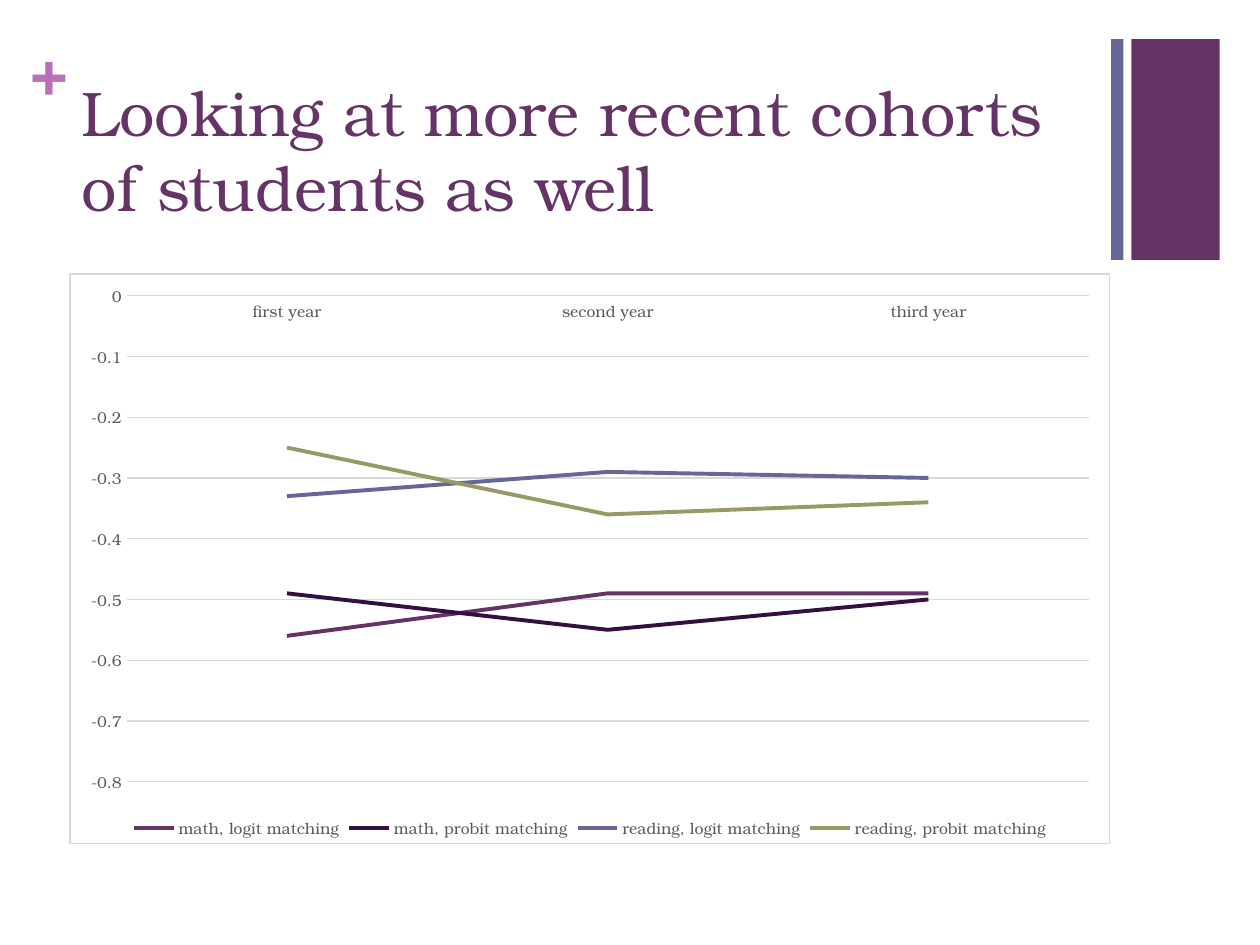
import pptx
import pptx.chart.data
import pptx.dml.color
import pptx.enum.chart
import pptx.enum.shapes
import pptx.enum.text
import pptx.util
from lxml import etree
from pptx.util import Cm

FONT = "TeX Gyre Bonum"
PLUM = "663366"
SLATE = "666699"
GRID = "D9D9D9"


def colour(value):
    return pptx.dml.color.RGBColor.from_string(value)


def style_font(font, size, value):
    font.name = FONT
    font.size = pptx.util.Pt(size)
    font.color.rgb = colour(value)


deck = pptx.Presentation()
deck.slide_width = Cm(25.4)
deck.slide_height = Cm(19.05)
page = deck.slides.add_slide(deck.slide_layouts[6])

for left, width, fill in [(22.81, 1.78, PLUM), (22.4, 0.25, SLATE)]:
    bar = page.shapes.add_shape(
        pptx.enum.shapes.MSO_SHAPE.RECTANGLE, Cm(left), Cm(0.79), Cm(width), Cm(4.45)
    )
    bar.shadow.inherit = False
    bar.fill.solid()
    bar.fill.fore_color.rgb = colour(fill)
    bar.line.fill.background()

title = "Looking at more recent cohorts of students as well"
for text, place, inset, value, bold in [
    ("+", (0.61, 0.64, 0.74, 1.55), (0, 0), "B870B8", True),
    (title, (1.4, 1.35, 20.98, 3.1), (0.25, 0.13), PLUM, False),
]:
    box = page.shapes.add_textbox(*[Cm(length) for length in place])
    frame = box.text_frame
    frame.word_wrap = True
    frame.vertical_anchor = pptx.enum.text.MSO_ANCHOR.TOP
    frame.margin_left = frame.margin_right = Cm(inset[0])
    frame.margin_top = frame.margin_bottom = Cm(inset[1])
    span = frame.paragraphs[0].add_run()
    span.text = text
    span.font.bold = bold
    style_font(span.font, 36, value)

series = [
    ("math, logit matching", (-0.56, -0.49, -0.49), PLUM),
    ("math, probit matching", (-0.49, -0.55, -0.5), "330F42"),
    ("reading, logit matching", (-0.33, -0.29, -0.3), SLATE),
    ("reading, probit matching", (-0.25, -0.36, -0.34), "999966"),
]
data = pptx.chart.data.CategoryChartData()
data.categories = ["first year", "second year", "third year"]
for name, values, value in series:
    data.add_series(name, values)

chart = page.shapes.add_chart(
    pptx.enum.chart.XL_CHART_TYPE.LINE, Cm(1.4), Cm(5.51), Cm(20.98), Cm(11.51), data
).chart
style_font(chart.font, 10, "000000")
chart.has_title = False
chart.has_legend = True
chart.legend.position = pptx.enum.chart.XL_LEGEND_POSITION.BOTTOM
chart.legend.include_in_layout = False
style_font(chart.legend.font, 9, "595959")

chart.plots[0].vary_by_categories = False
for line, (name, values, value) in zip(chart.plots[0].series, series):
    line.smooth = False
    line.marker.style = pptx.enum.chart.XL_MARKER_STYLE.NONE
    line.format.line.color.rgb = colour(value)
    line.format.line.width = pptx.util.Pt(2.25)

for axis in (chart.category_axis, chart.value_axis):
    axis.major_tick_mark = pptx.enum.chart.XL_TICK_MARK.NONE
    axis.minor_tick_mark = pptx.enum.chart.XL_TICK_MARK.NONE
    style_font(axis.tick_labels.font, 9, "595959")

chart.value_axis.minimum_scale = -0.8
chart.value_axis.maximum_scale = 0
chart.value_axis.major_unit = 0.1
chart.value_axis.format.line.fill.background()
for rule in (chart.category_axis.format.line, chart.value_axis.major_gridlines.format.line):
    rule.color.rgb = colour(GRID)
    rule.width = pptx.util.Pt(0.75)

frame_style = pptx.oxml.parse_xml(
    '<c:spPr xmlns:c="http://schemas.openxmlformats.org/drawingml/2006/chart"'
    ' xmlns:a="http://schemas.openxmlformats.org/drawingml/2006/main">'
    '<a:solidFill><a:srgbClr val="FFFFFF"/></a:solidFill>'
    f'<a:ln w="9525"><a:solidFill><a:srgbClr val="{GRID}"/></a:solidFill></a:ln>'
    "</c:spPr>"
)
chart.element.chart.addnext(frame_style)

deck.save("out.pptx")
